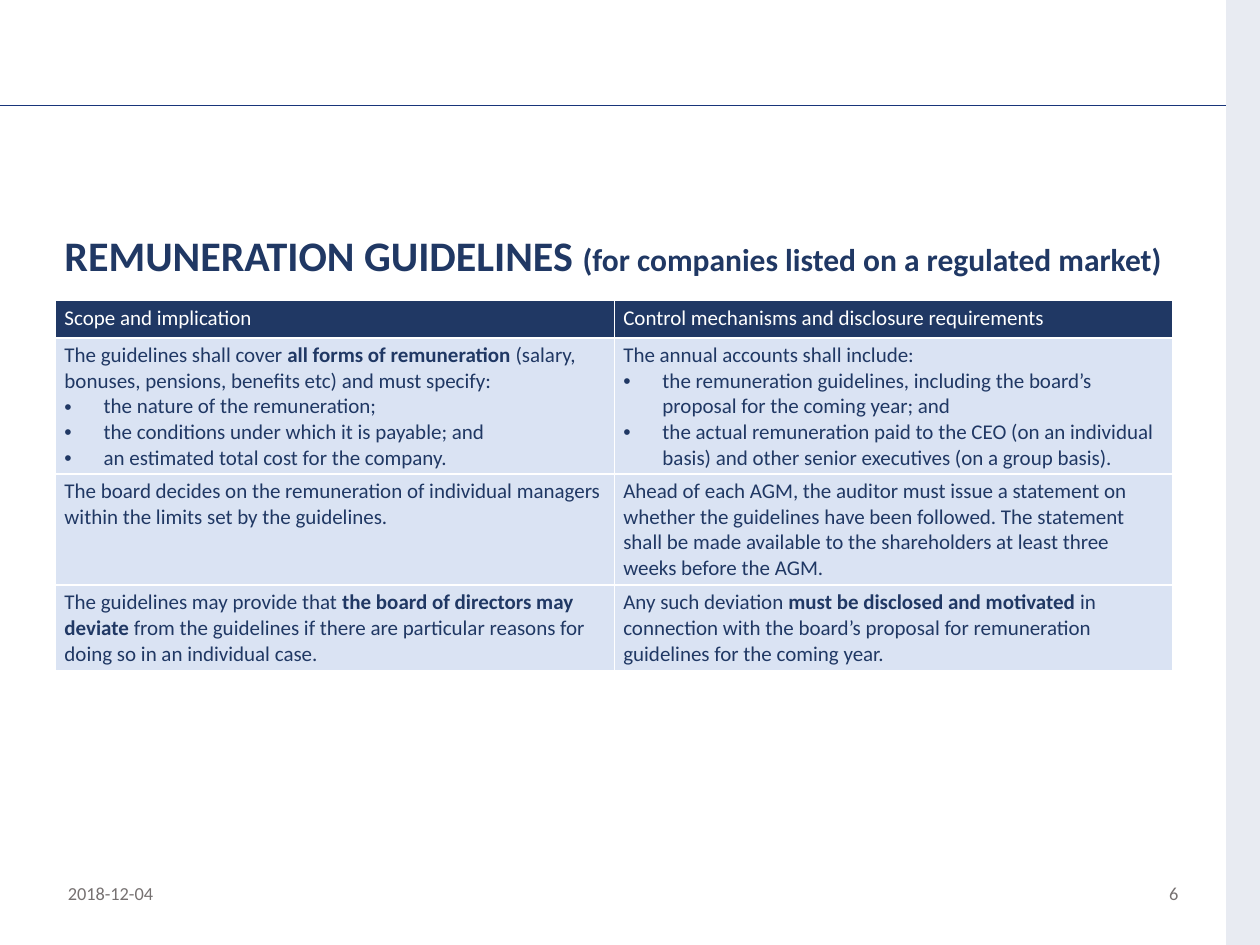
"""Build the remuneration guidelines slide."""
from dataclasses import dataclass

from lxml import etree
from pptx import Presentation
from pptx import util as u
from pptx.dml import color
from pptx.enum import shapes, text
from pptx.oxml import ns

NAVY, PALE, WHITE, GREY = "203864", "DAE3F3", "FFFFFF", "767171"
LEFT, WIDE = 1.12, 22.53
PADS = {"left": 0.18, "top": 0.1, "right": 0.18, "bottom": 0.1}
HEADS = ["Scope and implication", "Control mechanisms and disclosure requirements"]
ROWS = [
    [
        [
            "The guidelines shall cover *all forms of remuneration *(salary, "
            "bonuses, pensions, benefits etc) and must specify:",
            "• the nature of the remuneration;",
            "• the conditions under which it is payable; and",
            "• an estimated total cost for the company.",
        ],
        [
            "The annual accounts shall include:",
            "• the remuneration guidelines, including the board’s proposal "
            "for the coming year; and",
            "• the actual remuneration paid to the CEO (on an individual basis) "
            "and other senior executives (on a group basis).",
        ],
    ],
    [
        ["The board decides on the remuneration of individual managers within "
         "the limits set by the guidelines."],
        ["Ahead of each AGM, the auditor must issue a statement on whether the "
         "guidelines have been followed. The statement shall be made available "
         "to the shareholders at least three weeks before the AGM."],
    ],
    [
        ["The guidelines may provide that *the board of directors may deviate* "
         "from the guidelines if there are particular reasons for doing so in "
         "an individual case."],
        ["Any such deviation *must be disclosed and motivated *in connection "
         "with the board’s proposal for remuneration guidelines for the coming "
         "year."],
    ],
]
HIGHS = [0.76, 2.72, 2.24, 1.73]


@dataclass
class Note:
    """A short text in the foot of the slide."""
    words: str
    left: float
    width: float


NOTES = [Note("6", 23.32, 0.97), Note("2018-12-04", LEFT, 5.72)]


def rgb(code: str) -> color.RGBColor:
    """Turn a hex string into a colour."""
    return color.RGBColor.from_string(code)


def style(font, size: float, code: str, bold: bool = False) -> None:
    """Set the look of a font."""
    font.name, font.size, font.bold = "Calibri", u.Pt(size), bold
    font.color.rgb = rgb(code)


def pad(item) -> None:
    """Set the inner margins of a cell or text frame."""
    for side, gap in PADS.items():
        setattr(item, f"margin_{side}", u.Cm(gap))


def bullet(para) -> None:
    """Give a paragraph a hanging bullet."""
    props = para._p.get_or_add_pPr()
    props.set("marL", str(u.Cm(0.79)))
    props.set("indent", str(-u.Cm(0.79)))
    etree.SubElement(props, ns.qn("a:buFont"), typeface="Arial")
    etree.SubElement(props, ns.qn("a:buChar"), char="•")


def write(para, line: str, code: str) -> None:
    """Write a line, with the parts between stars in bold."""
    if line.startswith("• "):
        bullet(para)
        line = line[2:]
    for i, part in enumerate(line.split("*")):
        run = para.add_run()
        run.text = part
        style(run.font, 12, code, i % 2 == 1)


def edge(cell, name: str, width: float) -> None:
    """Add one white border to a cell."""
    props = cell._tc.get_or_add_tcPr()
    line = etree.SubElement(props, ns.qn(f"a:{name}"), w=str(u.Pt(width)))
    fill = etree.SubElement(line, ns.qn("a:solidFill"))
    etree.SubElement(fill, ns.qn("a:srgbClr"), val=WHITE)


def fill_cell(cell, lines: list[str], head: bool) -> None:
    """Write and colour one table cell."""
    pad(cell)
    for name in ("lnL", "lnR", "lnT", "lnB"):
        edge(cell, name, 1)
    cell.fill.solid()
    cell.fill.fore_color.rgb = rgb(NAVY if head else PALE)
    frame = cell.text_frame
    for i, line in enumerate(lines):
        para = frame.add_paragraph() if i else frame.paragraphs[0]
        write(para, line, WHITE if head else NAVY)


def add_grid(slide) -> None:
    """Add the table of guidelines."""
    rows = [[[head] for head in HEADS], *ROWS]
    grid = slide.shapes.add_table(
        len(rows), len(HEADS), u.Cm(LEFT), u.Cm(6.05), u.Cm(WIDE), u.Cm(sum(HIGHS))
    ).table
    for r, (row, high) in enumerate(zip(rows, HIGHS)):
        grid.rows[r].height = u.Cm(high)
        for c, lines in enumerate(row):
            fill_cell(grid.cell(r, c), lines, r == 0)


def add_title(slide) -> None:
    """Place and write the title."""
    title = slide.shapes.title
    title.left, title.top = u.Cm(LEFT), u.Cm(4.52)
    title.width, title.height = u.Cm(WIDE), u.Cm(1.35)
    frame = title.text_frame
    pad(frame)
    frame.word_wrap = True
    frame.auto_size = text.MSO_AUTO_SIZE.NONE
    frame.vertical_anchor = text.MSO_ANCHOR.MIDDLE
    para = frame.paragraphs[0]
    para.alignment, para.line_spacing = text.PP_ALIGN.LEFT, 0.9
    for words, size in [("REMUNERATION GUIDELINES ", 24),
                        ("(for companies listed on a regulated market)", 18)]:
        run = para.add_run()
        run.text = words
        style(run.font, size, NAVY, True)


def add_frame(slide) -> None:
    """Add the top rule and the side band."""
    rule = slide.shapes.add_connector(
        shapes.MSO_CONNECTOR.STRAIGHT, 0, u.Cm(2.13), u.Cm(25.4), u.Cm(2.13))
    rule.line.color.rgb, rule.line.width = rgb("18357A"), u.Pt(0.75)
    etree.SubElement(rule._element.spPr, ns.qn("a:effectLst"))
    band = slide.shapes.add_shape(
        shapes.MSO_SHAPE.RECTANGLE, u.Cm(24.72), 0, u.Cm(0.68), u.Cm(19.05))
    band.shadow.inherit = False
    band.fill.solid()
    band.fill.fore_color.rgb = rgb("E8EBF2")
    band.line.fill.background()


def add_note(slide, note: Note) -> None:
    """Add one foot text."""
    frame = slide.shapes.add_textbox(
        u.Cm(note.left), u.Cm(17.65), u.Cm(note.width), u.Cm(1.01)).text_frame
    frame.word_wrap = True
    frame.text = note.words
    style(frame.paragraphs[0].runs[0].font, 10.5, GREY)


def main() -> None:
    """Build and save the deck."""
    deck = Presentation()
    deck.slide_width, deck.slide_height = u.Cm(25.4), u.Cm(19.05)
    slide = deck.slides.add_slide(deck.slide_layouts[5])
    add_frame(slide)
    add_title(slide)
    for note in NOTES:
        add_note(slide, note)
    add_grid(slide)
    deck.save("out.pptx")


if __name__ == "__main__":
    main()
